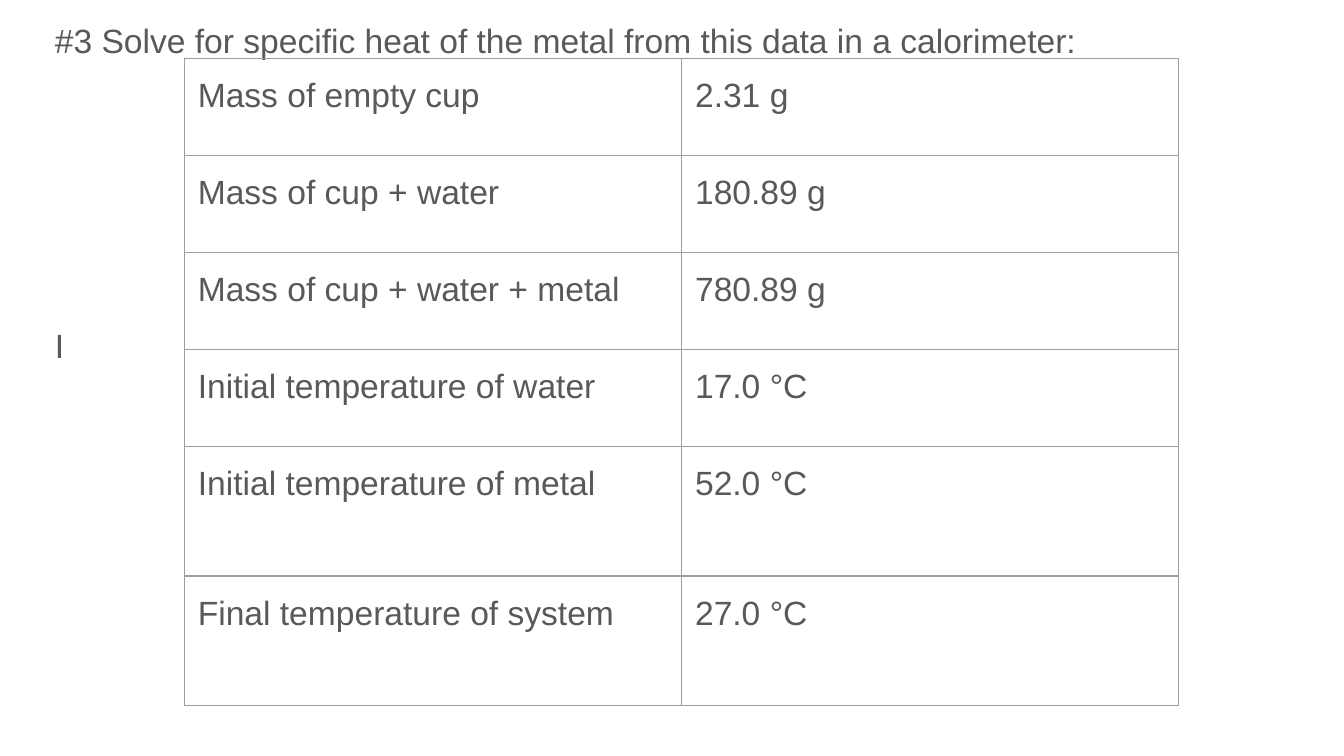
import pptx
import pptx.dml.color
import pptx.enum.text
import pptx.oxml
import pptx.oxml.ns
import pptx.util

Pt = pptx.util.Pt
TEXT_GRAY = pptx.dml.color.RGBColor(0x59, 0x59, 0x59)
BORDER_GRAY = pptx.dml.color.RGBColor(0x9E, 0x9E, 0x9E)
INSET = Pt(7.2)
MEASUREMENTS = [
    ("Mass of empty cup", "2.31 g"),
    ("Mass of cup + water", "180.89 g"),
    ("Mass of cup + water + metal", "780.89 g"),
    ("Initial temperature of water", "17.0 °C"),
    ("Initial temperature of metal", "52.0 °C"),
    ("Final temperature of system", "27.0 °C"),
]
ROW_HEIGHTS = [52, 52, 52, 52, 69.4, 69.4]


def format_paragraph(paragraph, space_before=0):
    paragraph.line_spacing = 1.15
    paragraph.space_before = Pt(space_before)
    paragraph.space_after = Pt(16)
    for run in paragraph.runs:
        run.font.name = "Arial"
        run.font.size = Pt(18)
        run.font.color.rgb = TEXT_GRAY


def set_insets(holder):
    holder.margin_left = holder.margin_right = INSET
    holder.margin_top = holder.margin_bottom = INSET


def remove_bullet(paragraph):
    properties = paragraph._p.get_or_add_pPr()
    properties.set("marL", "0")
    properties.set("indent", "0")
    pptx.oxml.ns.qn("a:buNone")
    properties.append(
        pptx.oxml.parse_xml(f"<a:buNone {pptx.oxml.ns.nsdecls('a')}/>")
    )


def add_cell_borders(cell):
    properties = cell._tc.get_or_add_tcPr()
    for position, side in enumerate(("lnL", "lnR", "lnT", "lnB")):
        border = pptx.oxml.parse_xml(
            f"<a:{side} {pptx.oxml.ns.nsdecls('a')} w=\"{Pt(0.75)}\">"
            f'<a:solidFill><a:srgbClr val="{BORDER_GRAY}"/></a:solidFill>'
            f"</a:{side}>"
        )
        properties.insert(position, border)


def place_question(slide, left, top, width, height):
    question = slide.placeholders[1]
    question.left, question.top = Pt(left), Pt(top)
    question.width, question.height = Pt(width), Pt(height)
    frame = question.text_frame
    frame.word_wrap = True
    frame.auto_size = pptx.enum.text.MSO_AUTO_SIZE.NONE
    frame.vertical_anchor = pptx.enum.text.MSO_ANCHOR.TOP
    set_insets(frame)
    prompt = frame.paragraphs[0]
    prompt.text = "#3 Solve for specific heat of the metal from this data in a calorimeter:"
    answer = frame.add_paragraph()
    answer.text = "I"
    for paragraph, space_before in ((prompt, 0), (answer, 123)):
        format_paragraph(paragraph, space_before)
        remove_bullet(paragraph)


def place_measurements(slide, left, top, width, height):
    measurements = slide.shapes.add_table(
        len(MEASUREMENTS), 2, Pt(left), Pt(top), Pt(width), Pt(height)
    ).table
    measurements.first_row = False
    measurements.horz_banding = False
    for column in measurements.columns:
        column.width = Pt(width / 2)
    for row, row_height, entries in zip(measurements.rows, ROW_HEIGHTS, MEASUREMENTS):
        row.height = Pt(row_height)
        for cell, entry in zip(row.cells, entries):
            cell.text_frame.text = entry
            format_paragraph(cell.text_frame.paragraphs[0])
            set_insets(cell)
            cell.fill.background()
            add_cell_borders(cell)


def main():
    presentation = pptx.Presentation()
    presentation.slide_width = Pt(720)
    presentation.slide_height = Pt(405)
    slide = presentation.slides.add_slide(presentation.slide_layouts[1])
    unused_title = slide.shapes.title.element
    unused_title.getparent().remove(unused_title)
    place_question(slide, 22.2, 0, 676, 383)
    place_measurements(slide, 98.8, 31.2, 532.8, sum(ROW_HEIGHTS))
    presentation.save("out.pptx")


if __name__ == "__main__":
    main()
